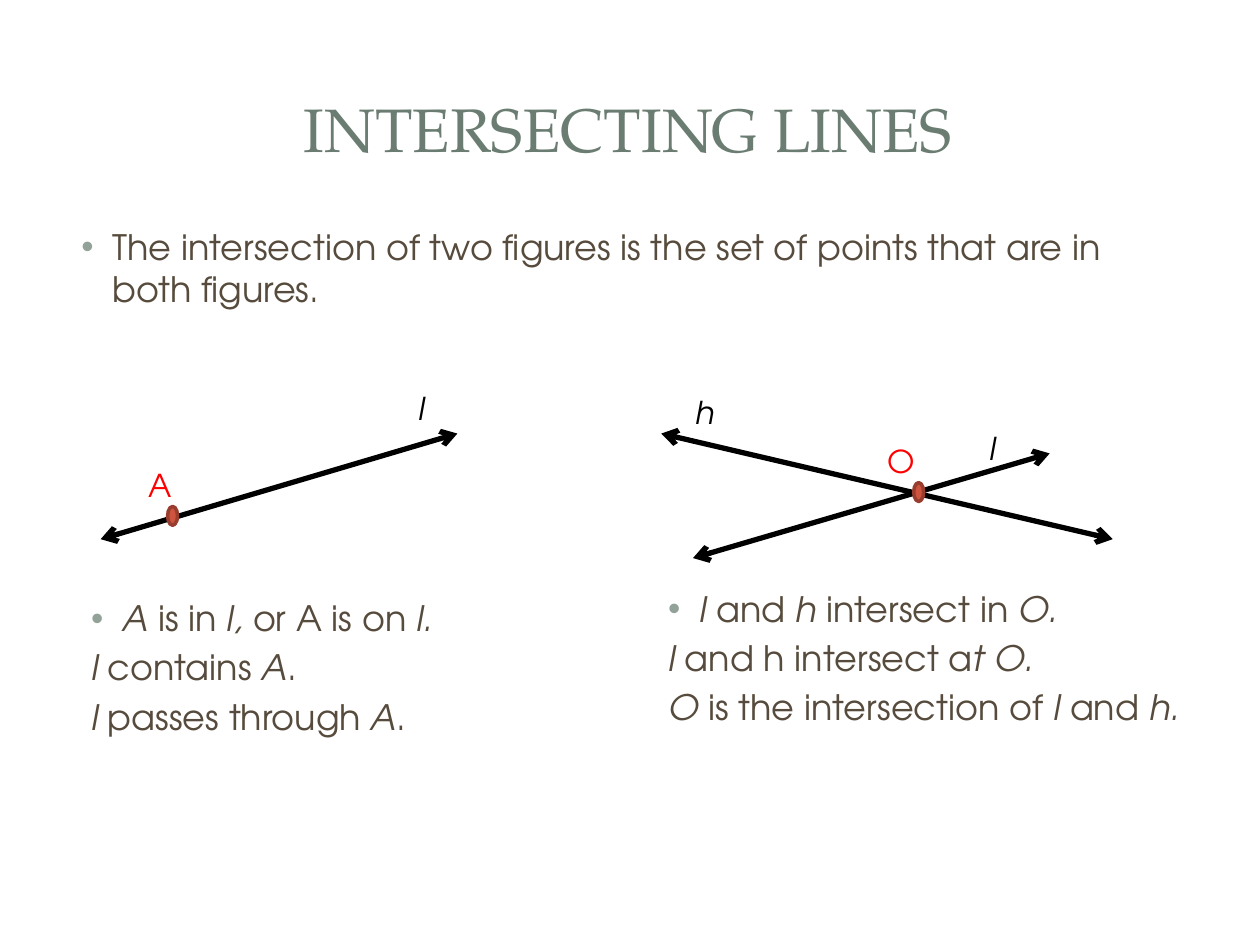
import pptx
import pptx.dml.color
import pptx.enum.shapes
import pptx.enum.text
import pptx.oxml.ns
import pptx.util
from lxml import etree

Cm = pptx.util.Cm
Pt = pptx.util.Pt
RGBColor = pptx.dml.color.RGBColor
qn = pptx.oxml.ns.qn

SAGE = RGBColor(0x6B, 0x7D, 0x72)
BROWN = RGBColor(0x56, 0x4B, 0x3C)
BLACK = RGBColor(0, 0, 0)
RED = RGBColor(0xFF, 0, 0)
RUST = RGBColor(0xCF, 0x54, 0x3F)
DARK_RUST = RGBColor(0x99, 0x3E, 0x2F)
BULLET_HEX = "93A299"

HEADING_FONT = "TeX Gyre Pagella"
BODY_FONT = "TeX Gyre Adventor"


def add_frame(slide, box):
    frame = slide.shapes.add_textbox(*(Cm(length) for length in box)).text_frame
    frame.word_wrap = True
    return frame


def add_run(paragraph, text, size, color, font=BODY_FONT, italic=False):
    run = paragraph.add_run()
    run.text = text
    run.font.size = Pt(size)
    run.font.name = font
    run.font.italic = italic
    run.font.color.rgb = color


def indent(paragraph, left, first):
    properties = paragraph._p.get_or_add_pPr()
    properties.set("marL", str(Cm(left)))
    properties.set("indent", str(Cm(first)))
    return properties


def add_bullet(paragraph):
    properties = indent(paragraph, 0.95, -0.63)
    bullet_color = etree.SubElement(properties, qn("a:buClr"))
    etree.SubElement(bullet_color, qn("a:srgbClr"), val=BULLET_HEX)
    etree.SubElement(properties, qn("a:buFont"), typeface="Arial")
    etree.SubElement(properties, qn("a:buChar"), char="•")


def add_title(slide, box, text):
    frame = add_frame(slide, box)
    frame.vertical_anchor = pptx.enum.text.MSO_ANCHOR.MIDDLE
    heading = frame.paragraphs[0]
    heading.alignment = pptx.enum.text.PP_ALIGN.CENTER
    add_run(heading, text, 35, SAGE, HEADING_FONT)


def add_definition(slide, box, text):
    definition = add_frame(slide, box).paragraphs[0]
    add_bullet(definition)
    add_run(definition, text, 20, BROWN)


def add_statements(slide, box, statements):
    frame = add_frame(slide, box)
    for row, pieces in enumerate(statements):
        if row == 0:
            statement = frame.paragraphs[0]
            add_bullet(statement)
        else:
            statement = frame.add_paragraph()
            statement.space_before = Pt(4)
            indent(statement, 0.32, 0)
        for position, piece in enumerate(pieces):
            add_run(statement, piece, 20, BROWN, italic=position % 2 == 0)


def add_line(slide, start, end):
    line = slide.shapes.add_connector(
        pptx.enum.shapes.MSO_CONNECTOR.STRAIGHT, *(Cm(v) for v in start + end))
    line.line.color.rgb = BLACK
    line.line.width = Pt(3)
    outline = line.line._get_or_add_ln()
    for tip in ("a:headEnd", "a:tailEnd"):
        etree.SubElement(outline, qn(tip), type="arrow")
    etree.SubElement(line._element.spPr, qn("a:effectLst"))


def add_point(slide, x, y):
    width, height = 0.2, 0.38
    point = slide.shapes.add_shape(
        pptx.enum.shapes.MSO_SHAPE.OVAL,
        Cm(x - width / 2), Cm(y - height / 2), Cm(width), Cm(height))
    point.shadow.inherit = False
    point.fill.solid()
    point.fill.fore_color.rgb = RUST
    point.line.color.rgb = DARK_RUST
    point.line.width = Pt(2)


def add_diagram(slide, left, top, lines, point, point_label, line_labels):
    def place(x, y):
        return left + x, top + y

    for start, end in lines:
        add_line(slide, place(*start), place(*end))
    add_point(slide, *place(*point))
    labels = [point_label + (RED, False)]
    labels += [label + (BLACK, True) for label in line_labels]
    for letter, corner, color, italic in labels:
        frame = add_frame(slide, place(*corner) + (2.12, 1.02))
        add_run(frame.paragraphs[0], letter, 18, color, italic=italic)


def main():
    deck = pptx.Presentation()
    deck.slide_width = Cm(25.4)
    deck.slide_height = Cm(19.05)
    slide = deck.slides.add_slide(deck.slide_layouts[6])

    add_title(slide, (1.19, 1.14, 22.94, 2.9), "INTERSECTING LINES")
    add_definition(
        slide, (1.07, 4.42, 23.1, 2),
        "The intersection of two figures is the set of points that are in both figures.")

    add_diagram(
        slide, 2.03, 7.72,
        lines=[((0, 3.15), (7.19, 1.02))],
        point=(1.45, 2.68),
        point_label=("A", (0.71, 1.55)),
        line_labels=[("l", (6.15, 0))])
    add_diagram(
        slide, 13.33, 7.72,
        lines=[((0.64, 3.53), (7.83, 1.42)), ((0, 1.02), (9.1, 3.15))],
        point=(5.19, 2.2),
        point_label=("O", (4.32, 1.07)),
        line_labels=[("l", (6.36, 0.81)), ("h", (0.44, 0.08))])

    add_statements(slide, (1.27, 11.91, 11.23, 3.3), [
        ("A", " is in ", "l, ", "or A is on ", "l."),
        ("l ", "contains ", "A", "."),
        ("l ", "passes through ", "A", "."),
    ])
    add_statements(slide, (12.9, 11.71, 11.23, 3.3), [
        ("l ", "and", " h ", "intersect in ", "O."),
        ("l ", "and h intersect a", "t O."),
        ("O ", "is the intersection of ", "l ", "and", " h."),
    ])

    deck.save("out.pptx")


if __name__ == "__main__":
    main()
